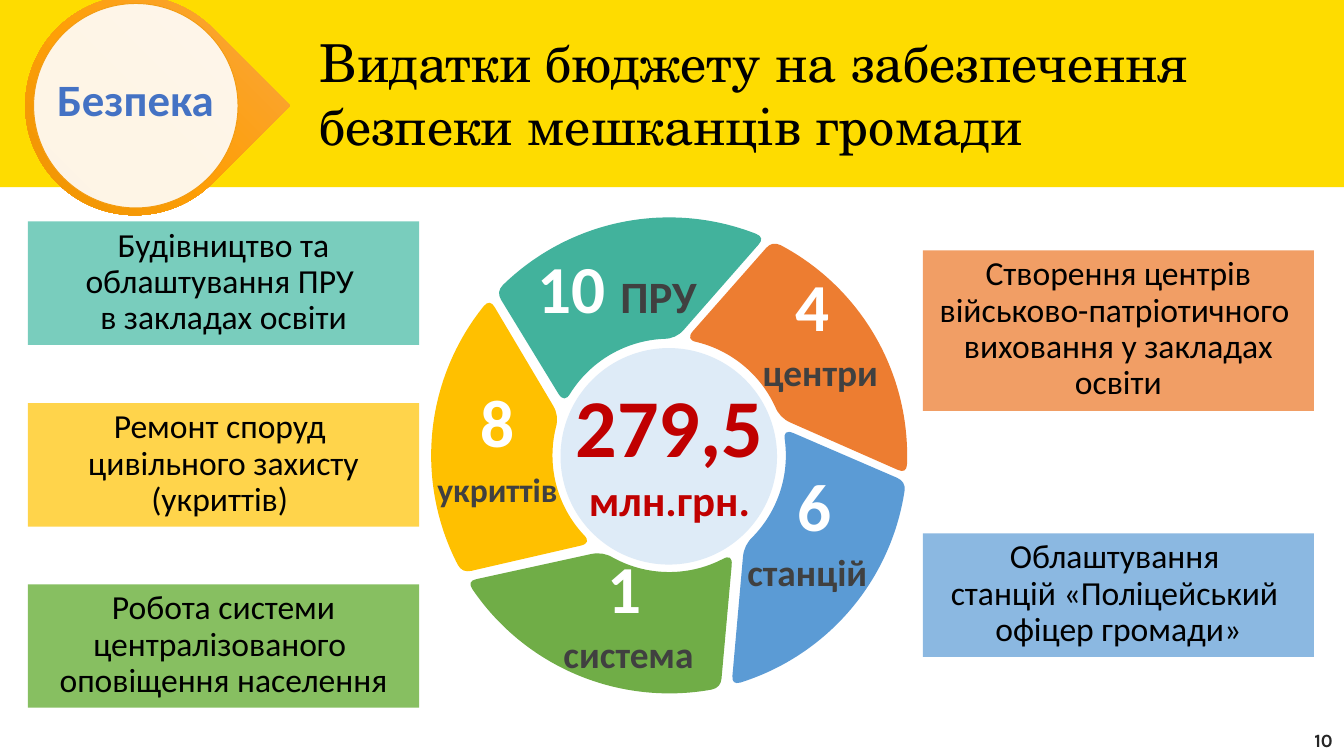
import math
import pptx
import pptx.util
import pptx.dml.color
import pptx.enum.shapes
import pptx.enum.text
import pptx.oxml
import pptx.oxml.ns

Pt = pptx.util.Pt
KIND = pptx.enum.shapes.MSO_SHAPE
ALIGN = pptx.enum.text.PP_ALIGN
ANCHOR = pptx.enum.text.MSO_ANCHOR
TAG = pptx.oxml.ns.qn
SPACE = pptx.oxml.ns.nsdecls("a")

HUES = {
    "band": "FEDC00", "hub": "DEEBF7", "sum": "C00000", "badge": "4472C4",
    "rim": "F39C12", "white": "FFFFFF", "black": "000000", "dark": "404040",
    "page": "262626",
    "green": "70AD47", "gold": "FFC000", "orange": "ED7D31",
    "blue": "5B9BD5", "teal": "42B29C",
    "pale gold": "FFD44B", "pale green": "87BF61", "pale blue": "8BB8E1",
    "pale orange": "F19E65", "pale teal": "79CDBD",
}
DROP = ((0, "F7A74C"), (50, "FE9F07"), (100, "E58E03"))

# Ring: centre, then radius and corner cut of the outer and inner edge
MID, OUT, INN = (358.5, 244), (127.5, 5), (62.5, 6.5)

# Hue: outer start and end angle, inner start and end angle, clockwise from east
WEDGES = {
    "green": (77.5, 148.1, 57, 124.6),
    "gold": (150.4, 221.1, 131.3, 199.7),
    "orange": (295.7, 364.4, 277.9, 341.2),
    "blue": (6.3, 74.8, -13.4, 50.1),
    "teal": (223.4, 293.7, 206.3, 273.3),
}

# Cards: hue, left, top, height, text
CARDS = (
    ("pale gold", 15, 216, 66.2, "Ремонт споруд \vцивільного захисту\v(укриттів) "),
    ("pale green", 15, 313, 66.2,
     "Робота системи централізованого \vоповіщення населення"),
    ("pale blue", 494.4, 285.7, 66.2,
     "Облаштування \vстанцій «Поліцейський \vофіцер громади»"),
    ("pale orange", 494.4, 134.1, 86,
     "Створення центрів військово-патріотичного \vвиховання у закладах освіти"),
    ("pale teal", 15, 118.6, 66.2,
     "Будівництво та\vоблаштування ПРУ \vв закладах освіти"),
)

# Counts: box, number, word, size of the word
COUNTS = (
    ((401, 155, 77, 60), "4 ", "центри", 20),
    ((393, 262, 79, 60), "  6 ", "станцій", 20),
    ((290, 306, 89, 60), " 1 ", " система", 20),
    ((227, 217, 79, 60), " 8 ", "укриттів", 18),
)


def rgb(hue):
    return pptx.dml.color.RGBColor.from_string(HUES[hue])


def put(thing, **form):
    for key, val in form.items():
        setattr(thing, key, val)


def paint(shape, hue):
    shape.shadow.inherit = False
    shape.fill.solid()
    shape.fill.fore_color.rgb = rgb(hue)
    shape.line.fill.background()


def block(home, kind, box, hue):
    shape = home.add_shape(kind, *map(Pt, box))
    paint(shape, hue)
    return shape


def write(shape, paras, form=None, **frame):
    """Each paragraph is a list of runs: text, size, hue, bold, font."""
    look = {"word_wrap": True, "vertical_anchor": ANCHOR.TOP}
    put(shape.text_frame, **{**look, **frame})
    for i, runs in enumerate(paras):
        para = (shape.text_frame.add_paragraph() if i
                else shape.text_frame.paragraphs[0])
        put(para, **{"alignment": ALIGN.CENTER, **(form or {})})
        for words, size, hue, bold, face in runs:
            for j, line in enumerate(words.split("\v")):
                if j:
                    para.add_line_break()
                run = para.add_run()
                run.text = line
                put(run.font, size=Pt(size), bold=bold, name=face)
                run.font.color.rgb = rgb(hue)


def label(home, box, paras, form=None, **frame):
    write(home.add_textbox(*map(Pt, box)), paras, form, **frame)


def bold(words, size, hue):
    return words, size, hue, True, "Calibri"


def polar(rad, deg):
    turn = math.radians(deg)
    return MID[0] + rad * math.cos(turn), MID[1] + rad * math.sin(turn)


def toward(start, end, dist):
    part = dist / math.dist(start, end)
    return tuple(a + (b - a) * part for a, b in zip(start, end))


def arc(rad, start, end):
    """One cubic piece: two control points and the end."""
    turn = math.radians(end - start)
    pull = 4 / 3 * math.tan(turn / 4)
    far, tilt = rad * math.hypot(1, pull), math.degrees(math.atan(pull))
    return polar(far, start + tilt), polar(far, end - tilt), polar(rad, end)


def bend(start, knee, end):
    """A rounded corner as one cubic piece."""
    return (*(toward(dot, knee, math.dist(dot, knee) * 2 / 3)
              for dot in (start, end)), end)


def edge(ring, start, end, before, after):
    """Corner, arc in two halves, corner; returns first point and pieces."""
    rad, cut = ring
    trim = math.copysign(math.degrees(cut / rad), end - start)
    half = (start + end) / 2
    tips = polar(rad, start), polar(rad, end)
    first, last = toward(tips[0], before, cut), toward(tips[1], after, cut)
    enter, leave = polar(rad, start + trim), polar(rad, end - trim)
    return first, [bend(first, tips[0], enter), arc(rad, start + trim, half),
                   arc(rad, half, end - trim), bend(leave, tips[1], last)]


def wedge(home, hue, angles):
    a, b, c, d = angles
    first, outer = edge(OUT, a, b, polar(INN[0], c), polar(INN[0], d))
    side, inner = edge(INN, d, c, polar(OUT[0], b), polar(OUT[0], a))
    parts = [*outer, (side,), *inner]
    pen = home.build_freeform(*map(Pt, first))
    pen.add_line_segments([tuple(map(Pt, part[-1])) for part in parts], close=True)
    shape = pen.convert_to_shape()
    paint(shape, hue)
    # Turn the straight pieces of corners and arcs into curves
    steps = shape.element.spPr.findall(".//" + TAG("a:lnTo"))
    for step, part in zip(steps, parts):
        if len(part) == 3:
            dots = "".join(f'<a:pt x="{Pt(x) - shape.left}" y="{Pt(y) - shape.top}"/>'
                           for x, y in part)
            step.getparent().replace(step, pptx.oxml.parse_xml(
                f"<a:cubicBezTo {SPACE}>{dots}</a:cubicBezTo>"))


def badge(home):
    drop = block(home, KIND.TEAR, (13.5, -2.2, 117.5, 117.5), "rim")
    drop.rotation = 45
    # Three-stop gradient
    stops = "".join(f'<a:gs pos="{pos * 1000}"><a:srgbClr val="{val}"/></a:gs>'
                    for pos, val in DROP)
    grad = pptx.oxml.parse_xml(
        f'<a:gradFill {SPACE} rotWithShape="1"><a:gsLst>{stops}</a:gsLst>'
        '<a:lin ang="5400000" scaled="0"/></a:gradFill>')
    props = drop.element.spPr
    props.replace(props.find(TAG("a:solidFill")), grad)
    # Disc with a slightly clear fill
    disc = block(home, KIND.OVAL, (18, 1.9, 109.5, 109.5), "white")
    tone = disc.element.spPr.find(".//" + TAG("a:srgbClr"))
    tone.append(pptx.oxml.parse_xml(f'<a:alpha {SPACE} val="90000"/>'))
    disc.line.color.rgb = rgb("rim")
    disc.line.width = Pt(0.5)
    edges = {"margin_" + side: Pt(3) for side in ("left", "top", "right", "bottom")}
    label(home, (9.3, 15.4, 126.5, 78.5), [[bold("Безпека", 24, "badge")]],
          {"line_spacing": 0.9, "space_after": Pt(8.4)},
          vertical_anchor=ANCHOR.MIDDLE, **edges)


def main():
    deck = pptx.Presentation()
    put(deck, slide_width=Pt(720), slide_height=Pt(405))
    home = deck.slides.add_slide(deck.slide_layouts[6]).shapes

    # Header band and hub
    block(home, KIND.RECTANGLE, (0, 0, 720, 100.3), "band")
    block(home, KIND.OVAL, (300.3, 186.5, 116, 116), "hub")
    label(home, (291, 196.3, 135.5, 90),
          [[bold("279,5", 44, "sum")], [bold("млн.грн.", 23, "sum")]],
          vertical_anchor=ANCHOR.MIDDLE)

    # Badge, title and page number
    badge(home.add_group_shape().shapes)
    label(home, (164, 12.6, 555, 75),
          [[("Видатки бюджету на забезпечення безпеки мешканців громади",
             28, "black", False, "TeX Gyre Schola")]], {"alignment": ALIGN.LEFT})
    label(home, (688.3, 386.8, 41.5, 19.5), [[("10", 10, "page", True, "Karla")]])

    # Ring
    ring = home.add_group_shape().shapes
    for hue, angles in WEDGES.items():
        wedge(ring, hue, angles)

    # Counts on the ring
    loose = {"word_wrap": False, "vertical_anchor": ANCHOR.MIDDLE}
    label(home, (280, 128, 101, 51),
          [[bold("10 ", 36, "white"), bold("ПРУ", 24, "dark")]], **loose)
    for box, count, word, size in COUNTS:
        label(home, box, [[bold(count, 36, "white")], [bold(word, size, "dark")]],
              {"line_spacing": Pt(26)}, **loose)

    # Cards
    for hue, left, top, high, words in CARDS:
        card = block(home, KIND.RECTANGLE, (left, top, 209.5, high), hue)
        write(card, [[(words, 18, "black", False, "Calibri")]],
              {"line_spacing": 0.9, "space_after": Pt(2.7)})

    deck.save("out.pptx")


if __name__ == "__main__":
    main()
